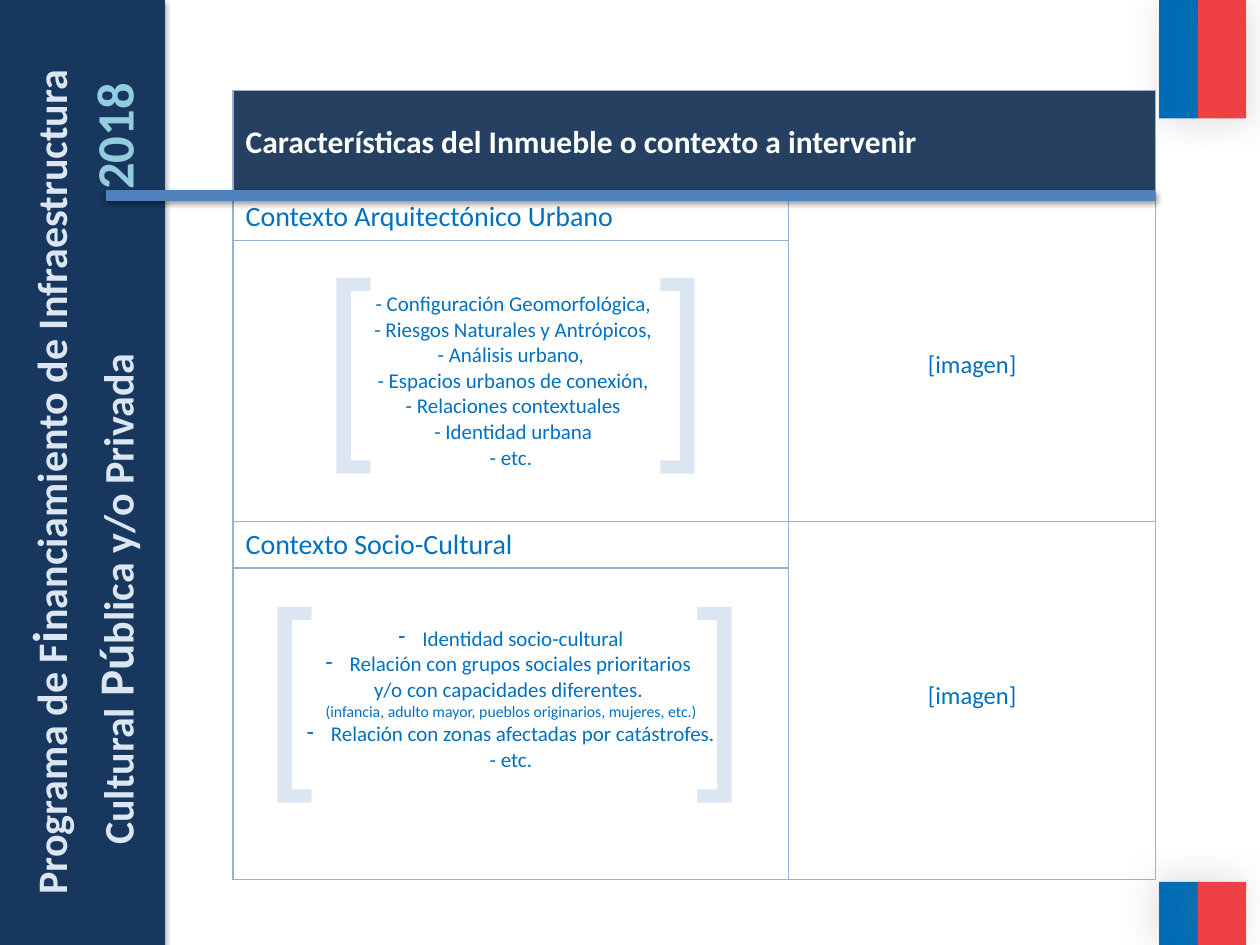
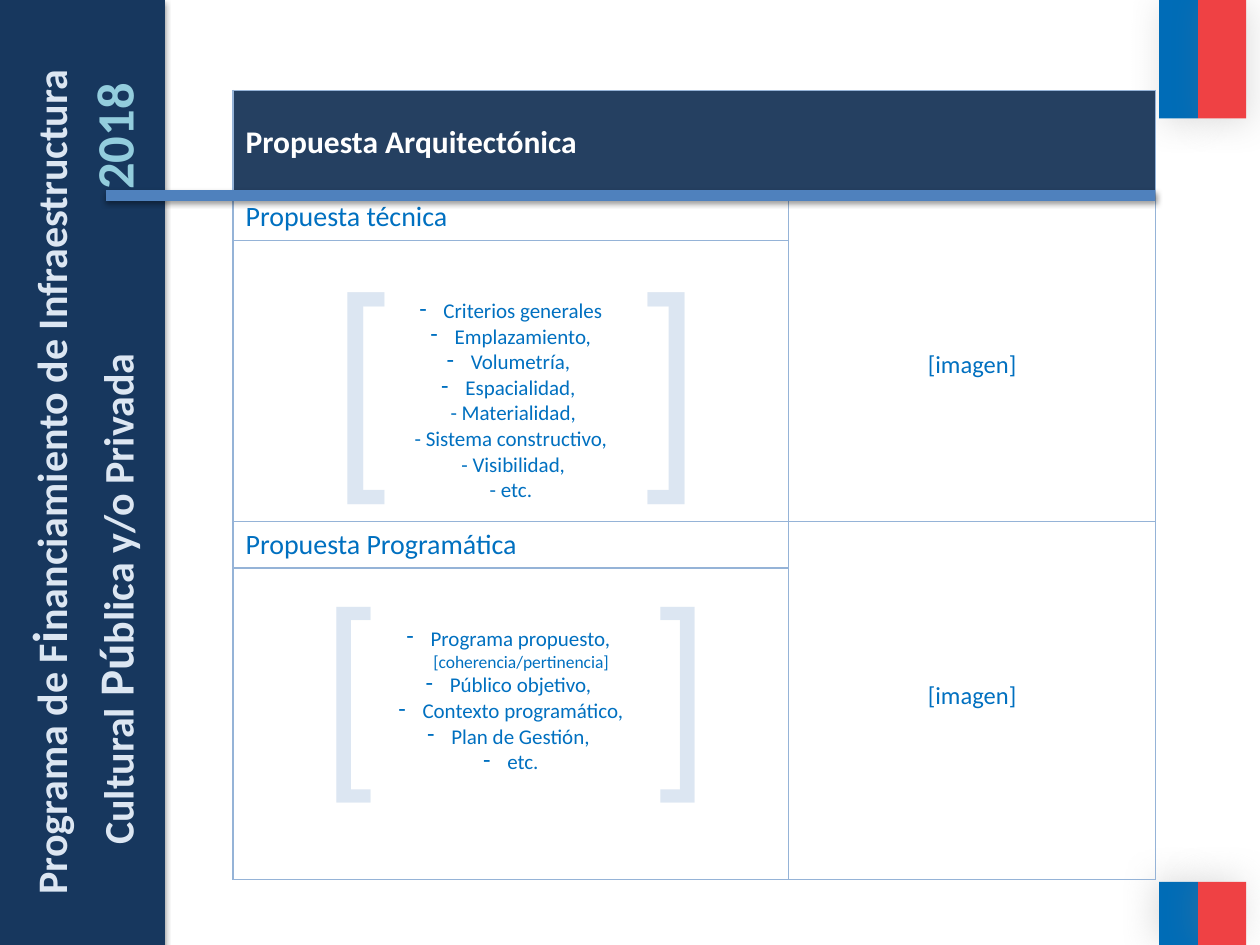
from lxml import etree
from pptx import Presentation
from pptx import util as u
from pptx.dml.color import RGBColor
from pptx.enum import shapes, text
from pptx.oxml.ns import qn

COLORS = {
    "navy": "17375E", "header": "254061", "pale": "DCE6F2", "year": "93CDDD",
    "body": "0070C0", "border": "95B3D7", "rule": "4F81BD", "white": "FFFFFF",
    "flag_blue": "006CB7", "flag_red": "EF4144", "gray": "808080", "black": "000000",
}
BODY_FONT = "Calibri"
BRACKET_FONT = "Arial Narrow"
COLUMNS = (4.41, 2.91)
ROWS = (0.82, 0.37, 2.23, 0.37, 2.47)
TABLE_BOX = (1.85, 0.72, sum(COLUMNS), sum(ROWS))
LIST_TOP = 0.46
IMAGE_TOPS = (1.24, 1.27)

SLIDES = [
    {
        "title": "Características del Inmueble o contexto a intervenir",
        "brackets": [((2.01, 4.31, 4.17, 2.12), 120, 3.42),
                     ((2.48, 1.7, 3.46, 2.12), 120, 2.66)],
        "sections": [
            ("Contexto Arquitectónico Urbano", "middle", [
                (" - Configuración Geomorfológica,", "plain"),
                (" - Riesgos Naturales y Antrópicos,", "plain"),
                (" - Análisis urbano, ", "plain"),
                (" - Espacios urbanos de conexión,", "plain"),
                (" - Relaciones contextuales", "plain"),
                (" - Identidad urbana", "plain"),
                ("- etc.", "plain")]),
            ("Contexto Socio-Cultural", "top", [
                ("Identidad socio-cultural", "dash"),
                ("Relación con grupos sociales prioritarios ", "dash"),
                ("y/o con capacidades diferentes. ", "plain"),
                ("(infancia, adulto mayor, pueblos originarios, mujeres, etc.)", "small"),
                ("Relación con zonas afectadas por catástrofes.", "dash"),
                ("- etc.", "plain")]),
        ],
    },
    {
        "title": "Propuesta Arquitectónica",
        "brackets": [((2.56, 1.78, 3.7, 2.29), 130, 2.47),
                     ((2.48, 4.31, 3.46, 2.12), 120, 2.66)],
        "sections": [
            ("Propuesta técnica", "top", [
                ("Criterios generales", "dash"),
                ("Emplazamiento,", "dash"),
                ("Volumetría, ", "dash"),
                ("Espacialidad, ", "dash"),
                (" - Materialidad,", "plain"),
                (" - Sistema constructivo, ", "plain"),
                (" - Visibilidad,", "plain"),
                ("- etc.", "plain")]),
            ("Propuesta Programática", "top", [
                ("Programa propuesto, ", "dash"),
                ("[coherencia/pertinencia]", "note"),
                ("Público objetivo, ", "dash"),
                ("Contexto programático,", "dash"),
                ("Plan de Gestión, ", "dash"),
                ("etc.", "dash")]),
        ],
    },
]

LINE_SIZES = {"plain": 12, "dash": 12, "small": 9, "note": 10}


def rgb(name):
    return RGBColor.from_string(COLORS[name])


def inches(box):
    return [u.Inches(value) for value in box]


def style_run(run, size, color, bold=False, font=BODY_FONT):
    run.font.size = u.Pt(size)
    run.font.color.rgb = rgb(color)
    run.font.bold = bold
    run.font.name = font


def add_shadow(shape, color, alpha, blur, distance, angle):
    properties = shape._element.spPr
    effects = properties.find(qn("a:effectLst"))
    if effects is None:
        effects = etree.SubElement(properties, qn("a:effectLst"))
    outer = etree.SubElement(effects, qn("a:outerShdw"), blurRad=str(u.Pt(blur)),
                             dist=str(u.Pt(distance)), dir=str(angle * 60000),
                             rotWithShape="0")
    tint = etree.SubElement(outer, qn("a:srgbClr"), val=COLORS[color])
    etree.SubElement(tint, qn("a:alpha"), val=str(alpha * 1000))


def add_band(slide, box, color, shadow):
    band = slide.shapes.add_shape(shapes.MSO_SHAPE.RECTANGLE, *inches(box))
    band.fill.solid()
    band.fill.fore_color.rgb = rgb(color)
    band.line.fill.background()
    band.shadow.inherit = False
    add_shadow(band, *shadow)


def add_textbox(slide, box):
    frame_box = slide.shapes.add_textbox(*inches(box))
    frame_box.text_frame.word_wrap = True
    return frame_box


def set_tab(paragraph, position):
    tabs = etree.SubElement(paragraph._p.get_or_add_pPr(), qn("a:tabLst"))
    etree.SubElement(tabs, qn("a:tab"), pos=str(u.Inches(position)), algn="l")


def set_indent(paragraph, left, hanging=0, dash=False):
    properties = paragraph._p.get_or_add_pPr()
    properties.set("marL", str(u.Inches(left)))
    properties.set("indent", str(u.Inches(-hanging)))
    if dash:
        etree.SubElement(properties, qn("a:buChar"), char="-")


def add_flag(slide, box, angle):
    left, top, width, height = box
    blue_width = 0.31
    shadow = ("gray", 25, 20, 3, angle)
    add_band(slide, (left, top, blue_width, height), "flag_blue", shadow)
    add_band(slide, (left + blue_width, top, width - blue_width, height),
             "flag_red", shadow)


def add_brackets(slide, box, size, closing_at):
    brackets = add_textbox(slide, box)
    paragraph = brackets.text_frame.paragraphs[0]
    paragraph.text = "[\t]"
    set_tab(paragraph, closing_at)
    style_run(paragraph.runs[0], size, "pale", font=BRACKET_FONT)


def add_vertical_line(slide, box, pieces):
    label = add_textbox(slide, box)
    label.rotation = 270
    paragraph = label.text_frame.paragraphs[0]
    for wording, size, color in pieces:
        run = paragraph.add_run()
        run.text = wording
        style_run(run, size, color, bold=True)
    return label.text_frame, paragraph


def add_program_name(slide):
    _, first_line = add_vertical_line(slide, (-3.14, 3.69, 7.04, 0.57), [
        ("Programa de F", 24, "pale"), ("i", 28, "pale"),
        ("nanciamiento de Infraestructura", 24, "pale")])
    first_line.alignment = text.PP_ALIGN.RIGHT
    frame, second_line = add_vertical_line(slide, (-2.2, 3.3, 6.2, 0.61), [
        ("Cultural", 24, "pale"), (" Pú", 28, "pale"),
        ("blica y/o Privada\t", 24, "pale"), ("2018", 30, "year")])
    frame.margin_left = frame.margin_right = 0
    set_tab(second_line, 5.2)


def add_rule(slide, left, right, y):
    rule = slide.shapes.add_connector(shapes.MSO_CONNECTOR.STRAIGHT,
                                      *inches((right, y, left, y)))
    rule.line.color.rgb = rgb("rule")
    rule.line.width = u.Pt(6)
    add_shadow(rule, "black", 38, 3.1, 1.6, 90)


def draw_borders(cell):
    properties = cell._tc.get_or_add_tcPr()
    for position, side in enumerate(("lnL", "lnR", "lnT", "lnB")):
        line = etree.Element(qn(f"a:{side}"), w=str(u.Pt(1)))
        fill = etree.SubElement(line, qn("a:solidFill"))
        etree.SubElement(fill, qn("a:srgbClr"), val=COLORS["border"])
        properties.insert(position, line)


def fill_heading(cell, wording, size, color, bold=False):
    paragraph = cell.text_frame.paragraphs[0]
    paragraph.text = wording
    style_run(paragraph.runs[0], size, color, bold)


def fill_image_slot(cell, top):
    cell.margin_top = u.Inches(top)
    fill_heading(cell, "[imagen]", 14, "body")
    cell.text_frame.paragraphs[0].alignment = text.PP_ALIGN.CENTER


def fill_topics(cell, anchor, topics):
    if anchor == "middle":
        cell.vertical_anchor = text.MSO_ANCHOR.MIDDLE
    else:
        cell.margin_top = u.Inches(LIST_TOP)
    frame = cell.text_frame
    for index, (wording, kind) in enumerate(topics):
        paragraph = frame.add_paragraph() if index else frame.paragraphs[0]
        paragraph.text = wording
        paragraph.alignment = text.PP_ALIGN.CENTER
        style_run(paragraph.runs[0], LINE_SIZES[kind], "body")
        if kind == "dash":
            set_indent(paragraph, 0.19, 0.19, dash=True)
        elif kind == "note":
            set_indent(paragraph, 0.16)


def add_content_table(slide, box, title, sections):
    table = slide.shapes.add_table(len(ROWS), len(COLUMNS), *inches(box)).table
    table.first_row = table.horz_banding = False
    for column, width in zip(table.columns, COLUMNS):
        column.width = u.Inches(width)
    for row, height in zip(table.rows, ROWS):
        row.height = u.Inches(height)
    for cell in table.iter_cells():
        cell.fill.background()
        draw_borders(cell)

    header = table.cell(0, 0)
    header.merge(table.cell(0, 1))
    header.fill.solid()
    header.fill.fore_color.rgb = rgb("header")
    header.vertical_anchor = text.MSO_ANCHOR.MIDDLE
    fill_heading(header, title, 18, "white", bold=True)

    for index, (heading, anchor, topics) in enumerate(sections):
        row = 1 + 2 * index
        image_slot = table.cell(row, 1)
        image_slot.merge(table.cell(row + 1, 1))
        fill_heading(table.cell(row, 0), heading, 16, "body")
        fill_topics(table.cell(row + 1, 0), anchor, topics)
        fill_image_slot(image_slot, IMAGE_TOPS[index])


def add_content_slide(presentation, content):
    slide = presentation.slides.add_slide(presentation.slide_layouts[6])
    add_flag(slide, (9.2, 0, 0.69, 0.94), 45)
    add_flag(slide, (9.2, 7, 0.69, 0.5), 215)
    for box, size, closing_at in content["brackets"]:
        add_brackets(slide, box, size, closing_at)
    add_band(slide, (0, 0, 1.31, 7.5), "navy", ("black", 35, 3.1, 1.8, 90))
    add_content_table(slide, TABLE_BOX, content["title"], content["sections"])
    add_rule(slide, 0.84, 9.17, 1.55)
    add_program_name(slide)


def main():
    presentation = Presentation()
    presentation.slide_width = u.Inches(10)
    presentation.slide_height = u.Inches(7.5)
    for content in SLIDES:
        add_content_slide(presentation, content)
    presentation.save("out.pptx")


if __name__ == "__main__":
    main()
